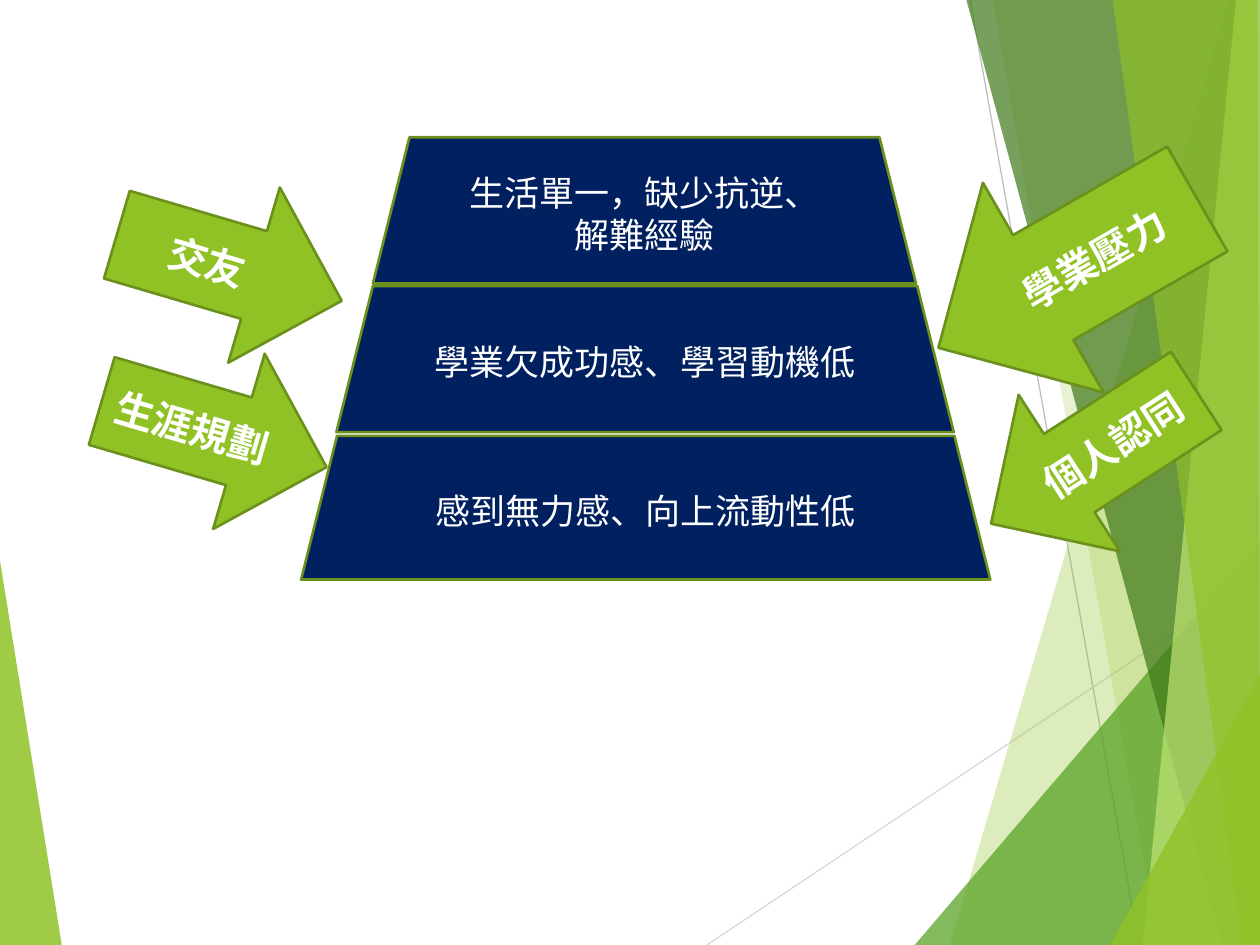
from lxml import etree
from pptx import Presentation
from pptx.dml.color import RGBColor
from pptx.enum.shapes import MSO_CONNECTOR as Conn, MSO_SHAPE as Kind
from pptx.enum.text import MSO_ANCHOR as Anchor, PP_ALIGN as Align
from pptx.oxml.ns import qn
from pptx.util import Inches, Pt

GREEN, EDGE, NAVY, WHITE = "90C226", "6B901C", "002060", "FFFFFF"
SANS_SC, SANS_TC = "Noto Sans CJK SC", "Noto Sans CJK TC"
WIDE, HIGH = 10, 7.5


def paint(fill, color, alpha=100):
    fill.solid()
    fill.fore_color.rgb = RGBColor.from_string(color)
    if alpha < 100:
        node = fill._xPr.find(qn("a:solidFill"))[0]
        etree.SubElement(node, qn("a:alpha"), val=str(alpha * 1000))


def write(shape, text, size=20, font=SANS_TC, bold=False, color=WHITE):
    frame = shape.text_frame
    frame.word_wrap = True
    frame.vertical_anchor = Anchor.MIDDLE
    for i, line in enumerate(text.split("\n")):
        para = frame.add_paragraph() if i else frame.paragraphs[0]
        para.alignment = Align.CENTER
        run = para.add_run()
        run.text = line
        run.font.size = Pt(size)
        run.font.bold = bold
        paint(run.font.fill, color)
        run.font.name = font
        # East Asian letters take their font from a:ea
        etree.SubElement(run.font._element, qn("a:ea"), typeface=font)


class Deck:
    def __init__(self):
        self.show = Presentation()
        self.show.slide_width = Inches(WIDE)
        self.show.slide_height = Inches(HIGH)
        self.slide = self.show.slides.add_slide(self.show.slide_layouts[6])
        self.shapes = self.slide.shapes

    def facet(self, points, color, alpha):
        dots = [(Inches(x), Inches(y)) for x, y in points]
        pen = self.shapes.build_freeform(*dots[0], scale=1)
        pen.add_line_segments(dots[1:], close=True)
        shape = pen.convert_to_shape()
        shape.shadow.inherit = False
        shape.line.fill.background()
        paint(shape.fill, color, alpha)

    def rule(self, start, end, color):
        ends = [Inches(v) for v in (*start, *end)]
        line = self.shapes.add_connector(Conn.STRAIGHT, *ends)
        line.line.width = Pt(0.75)
        paint(line.line.fill, color)
        etree.SubElement(line._element.spPr, qn("a:effectLst"))

    def block(self, kind, box, color, text, turn=0, **form):
        shape = self.shapes.add_shape(kind, *[Inches(v) for v in box])
        shape.shadow.inherit = False
        shape.rotation = turn
        paint(shape.fill, color)
        paint(shape.line.fill, EDGE)
        shape.line.width = Pt(1.5)
        write(shape, text, **form)


def main():
    deck = Deck()

    # Backdrop: left sliver, thin rules, right facets
    deck.facet([(0, 4.45), (0.49, HIGH), (0, HIGH)], GREEN, 85)
    deck.rule((5.61, HIGH), (WIDE, 4.57), "D9D9D9")
    deck.rule((7.7, 0), (9.04, HIGH), "BFBFBF")
    # Each facet: left end at the top, left end at the bottom, colour, opacity;
    # a pair as the first item is a corner on the right edge
    facets = [
        (9.75, 7.54, GREEN, 30),
        (7.88, 9.19, GREEN, 20),
        ((WIDE, 4.29), 7.26, "54A021", 72),
        (7.67, 9.7, "3F7819", 70),
        (9.81, 9.07, "C0E474", 70),
        (8.83, 9.86, GREEN, 65),
        ((WIDE, 5.36), 8.81, GREEN, 80),
    ]
    for top, low, color, alpha in facets:
        if isinstance(top, tuple):
            head = [top]
        else:
            right = 9.98 if top == 8.83 else WIDE
            head = [(top, 0), (right, 0)]
        deck.facet([*head, (WIDE, HIGH), (low, HIGH)], color, alpha)

    # Pyramid tiers, from the base up
    tiers = [
        (2.39, 3.46, 5.47, 1.14, "感到無力感、向上流動性低", SANS_SC),
        (2.67, 2.27, 4.9, 1.16, "學業欠成功感、學習動機低", SANS_TC),
        (2.96, 1.09, 4.31, 1.16, "生活單一，缺少抗逆、\n解難經驗", SANS_TC),
    ]
    for *box, text, font in tiers:
        deck.block(Kind.TRAPEZOID, box, NAVY, text, font=font)

    # Pressure arrows on both sides
    left, right = Kind.LEFT_ARROW, Kind.RIGHT_ARROW
    arrows = [
        (left, 7.29, 1.21, 2.37, 1.92, 330.1, "學業壓力"),
        (left, 7.71, 2.89, 1.94, 1.48, 327.1, "個人認同"),
        (right, 0.89, 1.4, 1.86, 1.45, 16.4, "交友"),
        (right, 0.77, 2.72, 1.86, 1.45, 16.4, "生涯規劃"),
    ]
    for kind, *box, turn, text in arrows:
        deck.block(kind, box, GREEN, text, turn, size=22.5, bold=True)

    deck.show.save("out.pptx")


if __name__ == "__main__":
    main()
